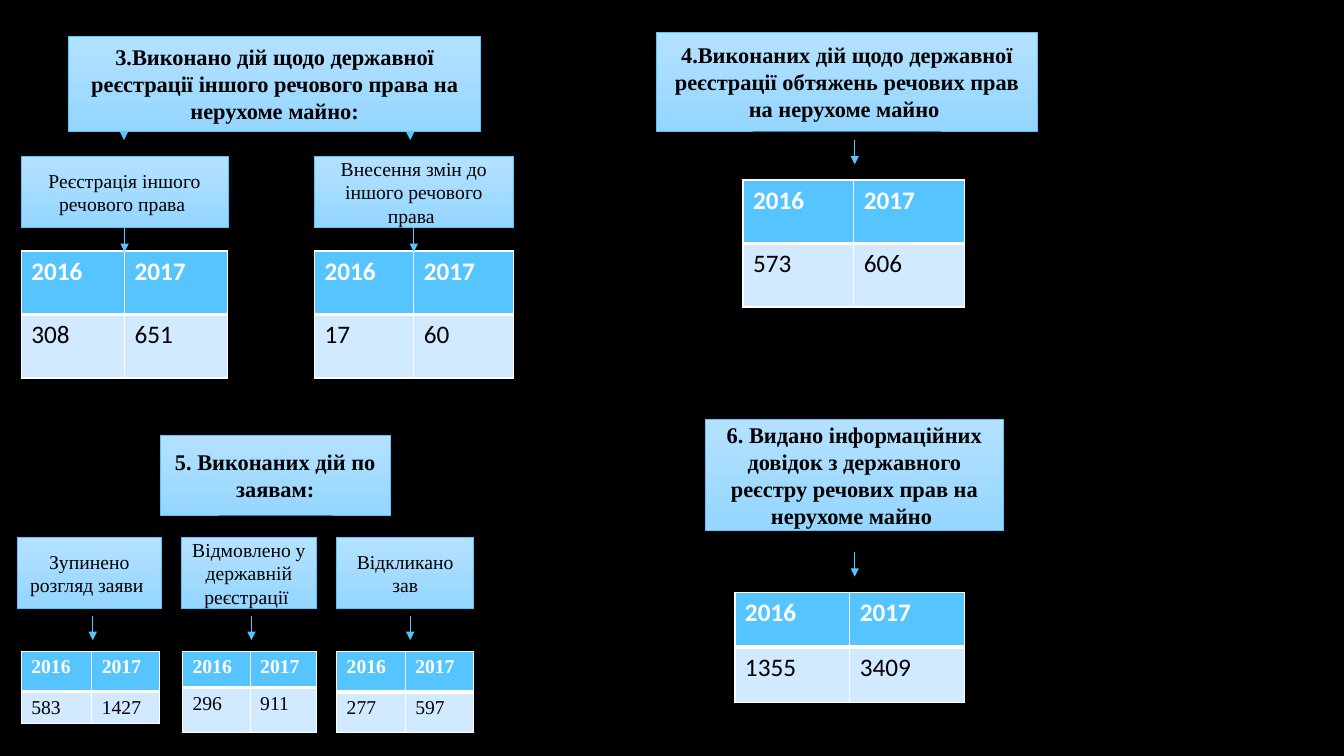
from lxml import etree
from pptx import Presentation
from pptx.dml.color import RGBColor
from pptx.enum.shapes import MSO_CONNECTOR, MSO_SHAPE
from pptx.enum.text import MSO_ANCHOR, PP_ALIGN
from pptx.oxml.ns import qn
from pptx.util import Inches, Pt

RECT = MSO_SHAPE.RECTANGLE
STRAIGHT = MSO_CONNECTOR.STRAIGHT
MIDDLE = MSO_ANCHOR.MIDDLE
CENTER = PP_ALIGN.CENTER
BOTTOM = 2
SERIF, SANS = "Times New Roman", "Calibri"
BLUE, PALE, WHITE, BLACK = "56C5FF", "D1EAFF", "FFFFFF", "000000"
GRADIENT = ("B4E1FF", "95D6FF")
YEARS = ("2016", "2017")
SLIDE_W, SLIDE_H = 13.33, 7.5
ARROW_H = 3.2


def color(value):
    """Turn a hex string into a colour."""
    return RGBColor.from_string(value)


def across(share):
    """Convert a percentage of the slide width to a length."""
    return Inches(SLIDE_W * share / 100)


def down(share):
    """Convert a percentage of the slide height to a length."""
    return Inches(SLIDE_H * share / 100)


def write(p, text, font, size, fill, bold):
    """Add one formatted run to a paragraph."""
    r = p.add_run()
    r.text = text
    r.font.name, r.font.size, r.font.bold = font, Pt(size), bold
    r.font.color.rgb = color(fill)


def panel(s, box, text, size=14, bold=False):
    """Draw a gradient rectangle with centred text."""
    x, y, w, h = box
    sp = s.shapes.add_shape(RECT, across(x), down(y), across(w), down(h))
    sp.shadow.inherit = False
    sp.fill.gradient()
    sp.fill.gradient_angle = 270
    for stop, tint in zip(sp.fill.gradient_stops, GRADIENT):
        stop.color.rgb = color(tint)
    sp.line.color.rgb = color(BLUE)
    sp.line.width = Pt(0.5)
    tf = sp.text_frame
    tf.word_wrap = True
    tf.vertical_anchor = MIDDLE
    p = tf.paragraphs[0]
    p.alignment = CENTER
    write(p, text, SERIF, size, BLACK, bold)
    return sp


def arrow(s, x, y, length=ARROW_H):
    """Draw a downward arrow."""
    cx = s.shapes.add_connector(STRAIGHT, across(x), down(y), across(x), down(y + length))
    cx.line.color.rgb = color(BLUE)
    cx.line.width = Pt(0.5)
    etree.SubElement(cx.line._get_or_add_ln(), qn("a:tailEnd"), type="triangle")
    etree.SubElement(cx._element.spPr, qn("a:effectLst"))
    return cx


def borders(cell, widths):
    """Give a cell white borders of the given widths by side."""
    for side, width in widths.items():
        ln = etree.SubElement(cell._tc.get_or_add_tcPr(), qn(f"a:ln{side}"), w=str(Pt(width)))
        fill = etree.SubElement(ln, qn("a:solidFill"))
        etree.SubElement(fill, qn("a:srgbClr"), val=WHITE)


def year_table(s, x, y, cols, rows, values, font=SANS, size=18):
    """Draw a table comparing two years."""
    frame = s.shapes.add_table(2, 2, across(x), down(y), across(sum(cols)), down(sum(rows)))
    table = frame.table
    for column, w in zip(table.columns, cols):
        column.width = across(w)
    for i, (texts, h) in enumerate(zip((YEARS, values), rows)):
        table.rows[i].height = down(h)
        head = i == 0
        for j, text in enumerate(texts):
            cell = table.cell(i, j)
            borders(cell, {"L": 1, "R": 1, "T": 1 if head else 3, "B": 3 if head else 1})
            cell.fill.solid()
            cell.fill.fore_color.rgb = color(BLUE if head else PALE)
            write(cell.text_frame.paragraphs[0], text, font, size, WHITE if head else BLACK, head)


def rights_section(s, box, title, branches):
    """Place a title with joined branches of label and table below it."""
    top = box[1]
    panel(s, box, title, 16, True)
    for x, w, stub_x, label, values in branches:
        arrow(s, stub_x, top + 12.67, 1.07)
        sp = panel(s, (x, top + 15.87, w, 9.47), label)
        year_table(s, x, top + 28.4, (w / 2, w / 2), (8.4, 8.4), values)
        arrow(s, x + w / 2, top + 25.33).begin_connect(sp, BOTTOM)


def requests_section(s, box, title, branches):
    """Place a title over evenly spaced arrows, each from a label to a table."""
    top = box[1]
    panel(s, box, title, 16, True)
    for i, (x, w, label, table_x, cols, rows, values) in enumerate(branches):
        panel(s, (x, top + 13.47, w, 9.47), label)
        arrow(s, 6.9 + 11.81 * i, top + 23.87)
        year_table(s, table_x, top + 28.55, cols, rows, values, SERIF, 14)


def single_section(s, box, title, gap, table_x, col, row, values):
    """Place a title, an arrow and one table in a column."""
    panel(s, box, title, 16, True)
    y = box[1] + box[3] + gap
    arrow(s, 63.6, y)
    year_table(s, table_x, y + 5.27, (col, col), (row, row), values)


def main():
    """Build and save the slide."""
    prs = Presentation()
    prs.slide_width, prs.slide_height = Inches(SLIDE_W), Inches(SLIDE_H)
    s = prs.slides.add_slide(prs.slide_layouts[6])
    s.background.fill.solid()
    s.background.fill.fore_color.rgb = color(BLACK)
    rights_section(
        s, (5.1, 4.8, 30.68, 12.53),
        "3.Виконано дій щодо державної реєстрації іншого речового права на нерухоме майно:",
        [(1.58, 15.38, 9.23, "Реєстрація іншого речового права ", ("308", "651")),
         (23.4, 14.78, 30.53, "Внесення змін до іншого речового права ", ("17", "60"))])
    single_section(
        s, (48.84, 4.27, 28.36, 13.07),
        "4.Виконаних дій щодо державної реєстрації обтяжень речових прав на нерухоме майно ",
        1.2, 55.28, 8.25, 8.4, ("573", "606"))
    requests_section(
        s, (11.93, 57.6, 17.1, 10.53), "5. Виконаних дій по заявам:",
        [(1.28, 10.73, "Зупинено розгляд заяви ", 1.58, (5.25, 5.03), (5.33, 4.2), ("583", "1427")),
         (13.5, 10.05, "Відмовлено у державній реєстрації ", 13.58, (5.03, 4.95), (4.8, 5.9),
          ("296", "911")),
         (25.05, 10.2, "Відкликано зав", 25.05, (5.1, 5.1), (5.4, 5.4), ("277", "597"))])
    single_section(
        s, (52.5, 55.47, 22.13, 14.67),
        "6. Видано інформаційних довідок з державного реєстру речових прав на нерухоме майно ",
        2.93, 54.68, 8.55, 7.27, ("1355", "3409"))
    prs.save("out.pptx")


if __name__ == "__main__":
    main()
